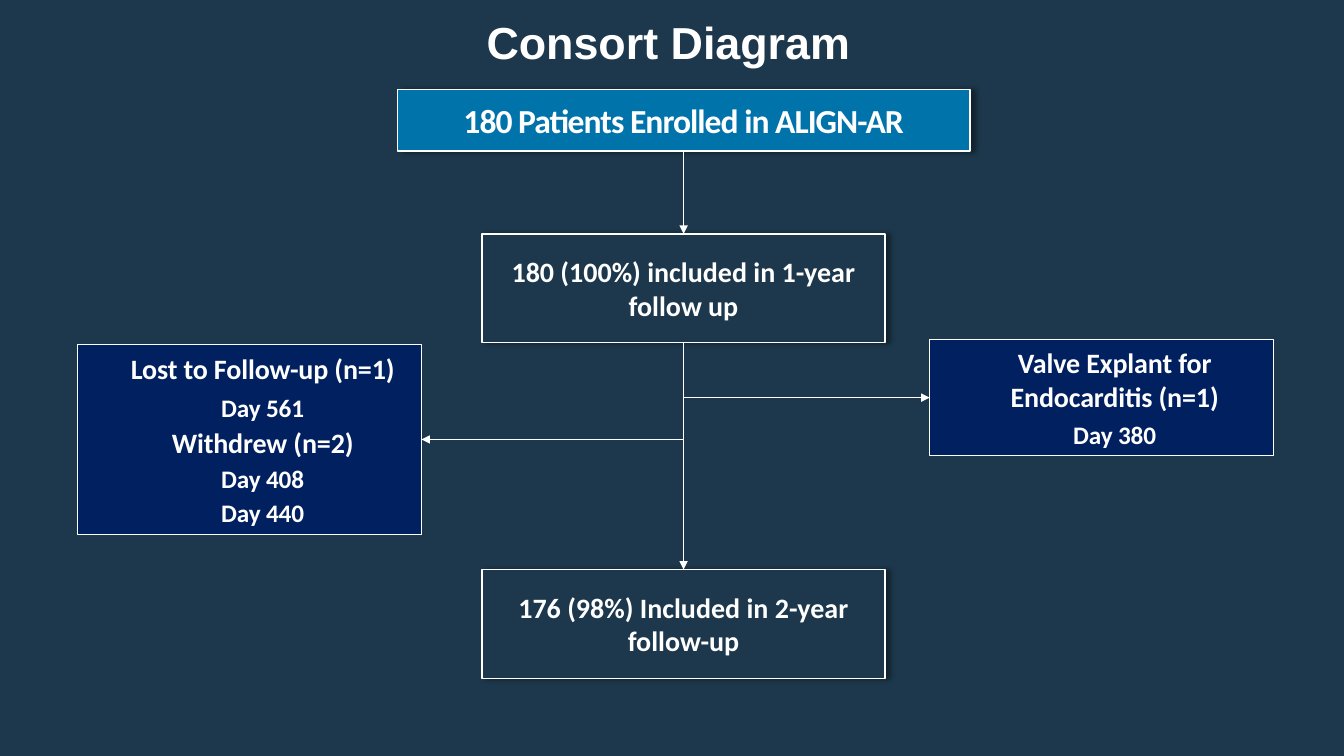
from lxml import etree
from pptx import Presentation
from pptx.dml.color import RGBColor
from pptx.enum.shapes import MSO_CONNECTOR, MSO_SHAPE
from pptx.enum.text import MSO_ANCHOR, MSO_AUTO_SIZE, PP_ALIGN
from pptx.oxml import parse_xml
from pptx.oxml.ns import nsdecls, qn
from pptx.util import Inches, Pt

STRAIGHT, ELBOW = MSO_CONNECTOR.STRAIGHT, MSO_CONNECTOR.ELBOW
RECTANGLE = MSO_SHAPE.RECTANGLE
MIDDLE, BOTTOM = MSO_ANCHOR.MIDDLE, MSO_ANCHOR.BOTTOM
NO_AUTOFIT = MSO_AUTO_SIZE.NONE
CENTER = PP_ALIGN.CENTER

WHITE = RGBColor(0xFF, 0xFF, 0xFF)
SLATE = RGBColor(0x1D, 0x38, 0x4C)
BLUE = RGBColor(0x00, 0x73, 0xAB)
NAVY = RGBColor(0x00, 0x20, 0x60)

SHADOW = (
    f'<a:effectLst {nsdecls("a")}><a:outerShdw blurRad="50800" dist="38100" dir="0" '
    'algn="l" rotWithShape="0"><a:srgbClr val="000000"><a:alpha val="40000"/>'
    '</a:srgbClr></a:outerShdw></a:effectLst>'
)


def format_paragraph(paragraph, font_name, size, indent=0, spacing=0):
    """Centre a paragraph and give it white bold type."""
    properties = paragraph._p.get_or_add_pPr()
    properties.set("marL", str(Inches(indent)))
    properties.set("indent", "0")
    paragraph.alignment = CENTER
    font = paragraph.font
    font.name, font.size, font.bold = font_name, Pt(size), True
    font.color.rgb = WHITE
    if spacing:
        for run in paragraph.runs:
            run._r.get_or_add_rPr().set("spc", str(spacing))


def add_title(slide, left, top, width, height, wording):
    """Place the slide title in the given box."""
    title = slide.shapes.title
    title.left, title.top = Inches(left), Inches(top)
    title.width, title.height = Inches(width), Inches(height)
    frame = title.text_frame
    frame.text = wording
    frame.auto_size = NO_AUTOFIT
    frame.vertical_anchor = BOTTOM
    frame.margin_left = frame.margin_right = frame.margin_bottom = 0
    frame.margin_top = Inches(0.14)
    format_paragraph(frame.paragraphs[0], "Arial", 32, indent=0.49)


def add_box(slide, left, top, width, height, fill, line_width, margin):
    """Add an outlined box and return it."""
    box = slide.shapes.add_shape(
        RECTANGLE, Inches(left), Inches(top), Inches(width), Inches(height))
    box.shadow.inherit = False
    box.fill.solid()
    box.fill.fore_color.rgb = fill
    box.line.color.rgb = WHITE
    box.line.width = Pt(line_width)
    frame = box.text_frame
    frame.word_wrap = True
    frame.vertical_anchor = MIDDLE
    frame.margin_left = frame.margin_right = Inches(margin)
    return box


def add_stage(slide, left, top, width, height, wording, fill=SLATE, size=20, spacing=0):
    """Add a shadowed box for one stage of the study."""
    stage = add_box(slide, left, top, width, height, fill, 1, 0)
    properties = stage._element.spPr
    properties.replace(properties.find(qn("a:effectLst")), parse_xml(SHADOW))
    stage.text_frame.text = wording
    format_paragraph(stage.text_frame.paragraphs[0], "Calibri", size, spacing=spacing)


def add_exclusion(slide, left, top, width, height, entries):
    """Add a navy box listing (wording, size, space before) entries."""
    frame = add_box(slide, left, top, width, height, NAVY, 0.75, 0.1).text_frame
    frame.text = "\n".join(wording for wording, _, _ in entries)
    for paragraph, (_, size, space_before) in zip(frame.paragraphs, entries):
        format_paragraph(paragraph, "Calibri", size, indent=0.26, spacing=-10)
        paragraph.space_before = Pt(space_before)


def add_arrow(slide, start, end, line_width=0.75, kind=STRAIGHT):
    """Add a white arrow between two points and return it."""
    arrow = slide.shapes.add_connector(kind, *map(Inches, start + end))
    arrow.line.color.rgb = WHITE
    arrow.line.width = Pt(line_width)
    etree.SubElement(arrow.line._get_or_add_ln(), qn("a:tailEnd"), type="triangle")
    etree.SubElement(arrow._element.spPr, qn("a:effectLst"))
    return arrow


def add_down_left_arrow(slide, start, end):
    """Add an arrow that runs down and then turns left, as a quarter-turned elbow."""
    drop, reach = end[1] - start[1], start[0] - end[0]
    left = (start[0] + end[0] - drop) / 2
    top = (start[1] + end[1] - reach) / 2
    arrow = add_arrow(slide, (left, top), (left + drop, top + reach), 1, ELBOW)
    properties = arrow._element.spPr
    properties.find(qn("a:xfrm")).set("rot", "5400000")
    properties.find(qn("a:prstGeom")).set("prst", "bentConnector2")


def add_flow(slide, axis, top):
    """Lay out the patient flow around a vertical axis."""
    stage_width, stage_height, side_width = 4, 1.08, 3.41
    stage_left = axis - stage_width / 2
    enrolled_bottom = top + 0.61
    one_year_top, two_year_top = top + 1.43, top + 4.76
    one_year_bottom = one_year_top + stage_height
    lost_left, lost_top, lost_height = axis - 6.01, top + 2.53, 1.88
    explant_left, explant_top, explant_height = axis + 2.44, top + 2.48, 1.15
    lost_middle = lost_top + lost_height / 2
    explant_middle = explant_top + explant_height / 2

    add_stage(slide, axis - 2.84, top, 5.68, 0.61,
              "180 Patients Enrolled in ALIGN-AR", BLUE, 24, -70)
    add_stage(slide, stage_left, one_year_top, stage_width, stage_height,
              "180 (100%) included in 1-year follow up")
    add_stage(slide, stage_left, two_year_top, stage_width, stage_height,
              "176 (98%) Included in 2-year follow-up")
    add_exclusion(slide, lost_left, lost_top, side_width, lost_height, [
        ("Lost to Follow-up (n=1)", 20, 0), ("Day 561", 18, 5),
        ("Withdrew (n=2)", 20, 2.7), ("Day 408", 18, 2.7), ("Day 440", 18, 2.7)])
    add_exclusion(slide, explant_left, explant_top, side_width, explant_height, [
        ("Valve Explant for Endocarditis (n=1)", 20, 0), ("Day 380", 18, 5)])

    add_arrow(slide, (axis, enrolled_bottom), (axis, one_year_top), 1)
    add_down_left_arrow(slide, (axis, one_year_bottom),
                        (lost_left + side_width, lost_middle))
    add_arrow(slide, (axis, lost_middle), (axis, two_year_top))
    add_arrow(slide, (axis, explant_middle), (explant_left, explant_middle))


def main():
    """Build the slide and save it."""
    presentation = Presentation()
    presentation.slide_width, presentation.slide_height = Inches(13.33), Inches(7.5)
    slide = presentation.slides.add_slide(presentation.slide_layouts.get_by_name("Title Only"))
    slide.background.fill.solid()
    slide.background.fill.fore_color.rgb = SLATE
    add_title(slide, 0.72, 0, 11.33, 0.68, "Consort Diagram")
    add_flow(slide, axis=6.78, top=0.89)
    presentation.save("out.pptx")


if __name__ == "__main__":
    main()
